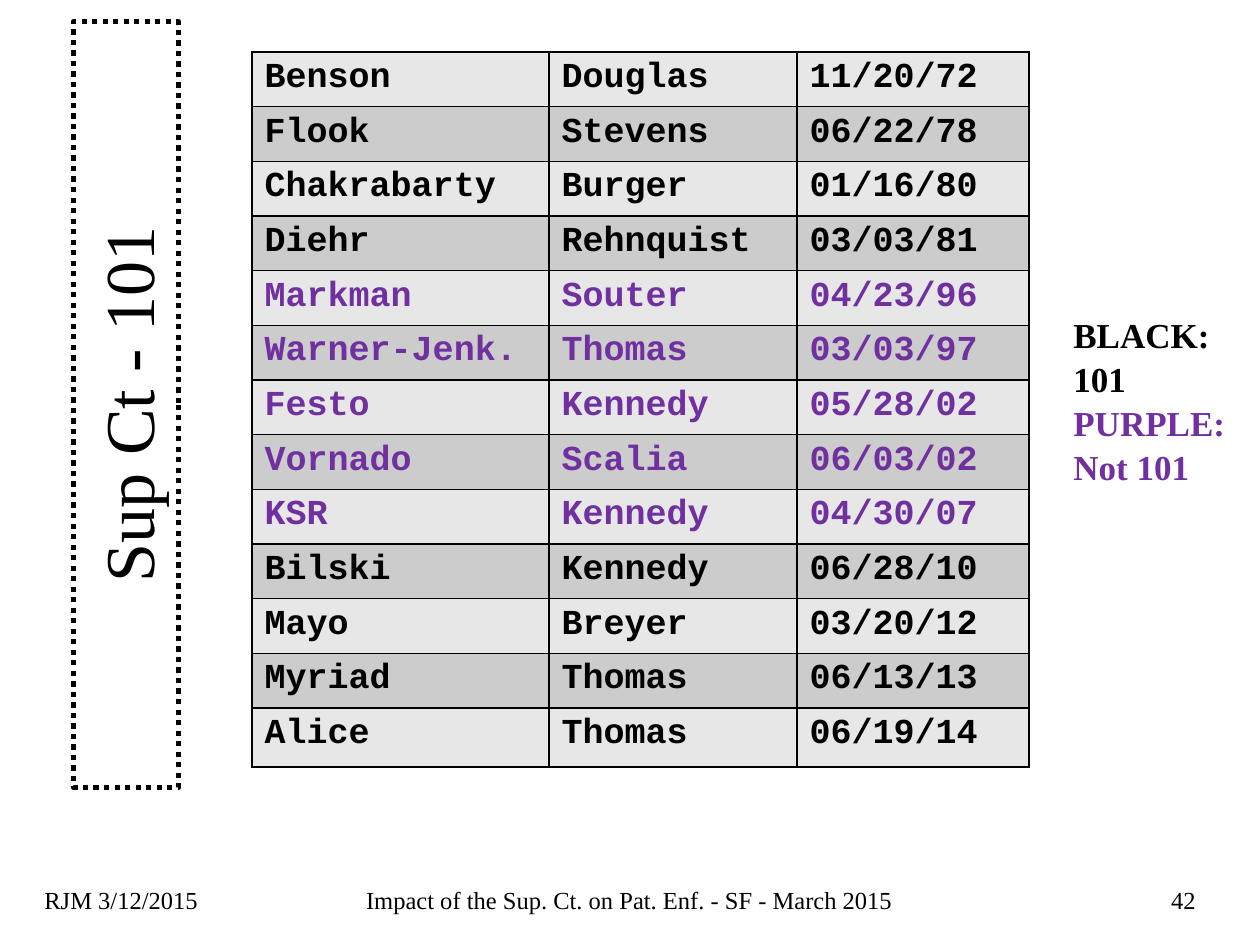
from lxml.etree import SubElement
from pptx import Presentation
from pptx.dml.color import RGBColor
from pptx.enum.dml import MSO_LINE
from pptx.enum.shapes import MSO_SHAPE
from pptx.enum.text import MSO_ANCHOR, MSO_AUTO_SIZE, PP_ALIGN
from pptx.oxml.ns import qn
from pptx.util import Emu, Pt

BLACK = RGBColor(0, 0, 0)
PURPLE = RGBColor(0x70, 0x30, 0xA0)
LIGHT = RGBColor(0xE7, 0xE7, 0xE7)
GREY = RGBColor(0xCC, 0xCC, 0xCC)
SERIF, MONO = "Times New Roman", "Courier New"
SCALE = 914400 / 126

CASES = [
    ("Benson", "Douglas", "11/20/72"),
    ("Flook", "Stevens", "06/22/78"),
    ("Chakrabarty", "Burger", "01/16/80"),
    ("Diehr", "Rehnquist", "03/03/81"),
    ("Markman", "Souter", "04/23/96"),
    ("Warner-Jenk.", "Thomas", "03/03/97"),
    ("Festo", "Kennedy", "05/28/02"),
    ("Vornado", "Scalia", "06/03/02"),
    ("KSR", "Kennedy", "04/30/07"),
    ("Bilski", "Kennedy", "06/28/10"),
    ("Mayo", "Breyer", "03/20/12"),
    ("Myriad", "Thomas", "06/13/13"),
    ("Alice", "Thomas", "06/19/14"),
]
OTHER = {"Markman", "Warner-Jenk.", "Festo", "Vornado", "KSR"}


def px(*nums):
    return [Emu(round(num * SCALE)) for num in nums]


def write(par, text, size=14, font=SERIF, color=BLACK, bold=False,
          align=PP_ALIGN.LEFT, space=None):
    par.alignment = align
    par.line_spacing = space
    run = par.add_run()
    run.text = text
    run.font.size = Pt(size)
    run.font.name = font
    run.font.bold = bold
    run.font.color.rgb = color
    return run


def stroke(parent, tag, width, dash="solid"):
    line = SubElement(parent, qn(tag), w=str(Pt(width)))
    fill = SubElement(line, qn("a:solidFill"))
    SubElement(fill, qn("a:srgbClr"), val=str(BLACK))
    SubElement(line, qn("a:prstDash"), val=dash)
    return line


class Page:
    def __init__(self, slide):
        self.slide = slide
        self.shapes = slide.shapes

    def title(self, text, box):
        shape = self.shapes.add_shape(MSO_SHAPE.RECTANGLE, *px(*box))
        shape.shadow.inherit = False
        shape.rotation = 270
        shape.fill.background()
        shape.line.color.rgb = BLACK
        shape.line.width = Pt(3)
        shape.line.dash_style = MSO_LINE.ROUND_DOT
        frame = shape.text_frame
        frame.word_wrap = True
        frame.vertical_anchor = MSO_ANCHOR.MIDDLE
        run = write(frame.paragraphs[0], text, size=40, align=PP_ALIGN.CENTER)
        # Outlined letters: the stroke comes first among the run properties
        props = run.font._element
        props.insert(0, stroke(props, "a:ln", 2.25, "sysDash"))

    def label(self, lines, box, grow=False, **style):
        frame = self.shapes.add_textbox(*px(*box)).text_frame
        frame.word_wrap = True
        if grow:
            frame.auto_size = MSO_AUTO_SIZE.SHAPE_TO_FIT_TEXT
        for num, (text, color) in enumerate(lines):
            par = frame.add_paragraph() if num else frame.paragraphs[0]
            write(par, text, color=color, **style)

    def table(self, rows, box, widths, heights):
        grid = self.shapes.add_table(len(rows), len(widths), *px(*box)).table
        for col, width in zip(grid.columns, px(*widths)):
            col.width = width
        for row, height in zip(grid.rows, px(*heights)):
            row.height = height
        for r, row in enumerate(rows):
            color = PURPLE if row[0] in OTHER else BLACK
            for c, text in enumerate(row):
                cell = grid.cell(r, c)
                props = cell._tc.get_or_add_tcPr()
                for side in "LRTB":
                    stroke(props, f"a:ln{side}", 1)
                cell.fill.solid()
                cell.fill.fore_color.rgb = GREY if r % 2 else LIGHT
                write(cell.text_frame.paragraphs[0], text, size=20,
                      font=MONO, color=color, bold=True)


def main():
    deck = Presentation()
    deck.slide_width, deck.slide_height = px(1260, 945)
    page = Page(deck.slides.add_slide(deck.slide_layouts[6]))

    # Sideways title
    page.title("Sup Ct - 101", (-257, 352, 766, 105))

    # Footer
    page.label([("RJM 3/12/2015", BLACK)], (32, 879, 294, 66))
    page.label([("Impact of the Sup. Ct. on Pat. Enf. - SF - March 2015", BLACK)],
               (346, 879, 567, 66), align=PP_ALIGN.CENTER)
    page.label([("42", BLACK)], (914, 879, 294, 66), align=PP_ALIGN.RIGHT)

    # Case, author and date
    heights = [45] + [52] * (len(CASES) - 2) + [59]
    page.table(CASES, (252, 52, 777, sum(heights)), (297, 248, 232), heights)

    # Colour key
    page.label([("BLACK: 101", BLACK), ("PURPLE: Not 101", PURPLE)],
               (1061, 305, 179, 183), grow=True, size=20, bold=True, space=1.05)

    deck.save("out.pptx")


if __name__ == "__main__":
    main()
